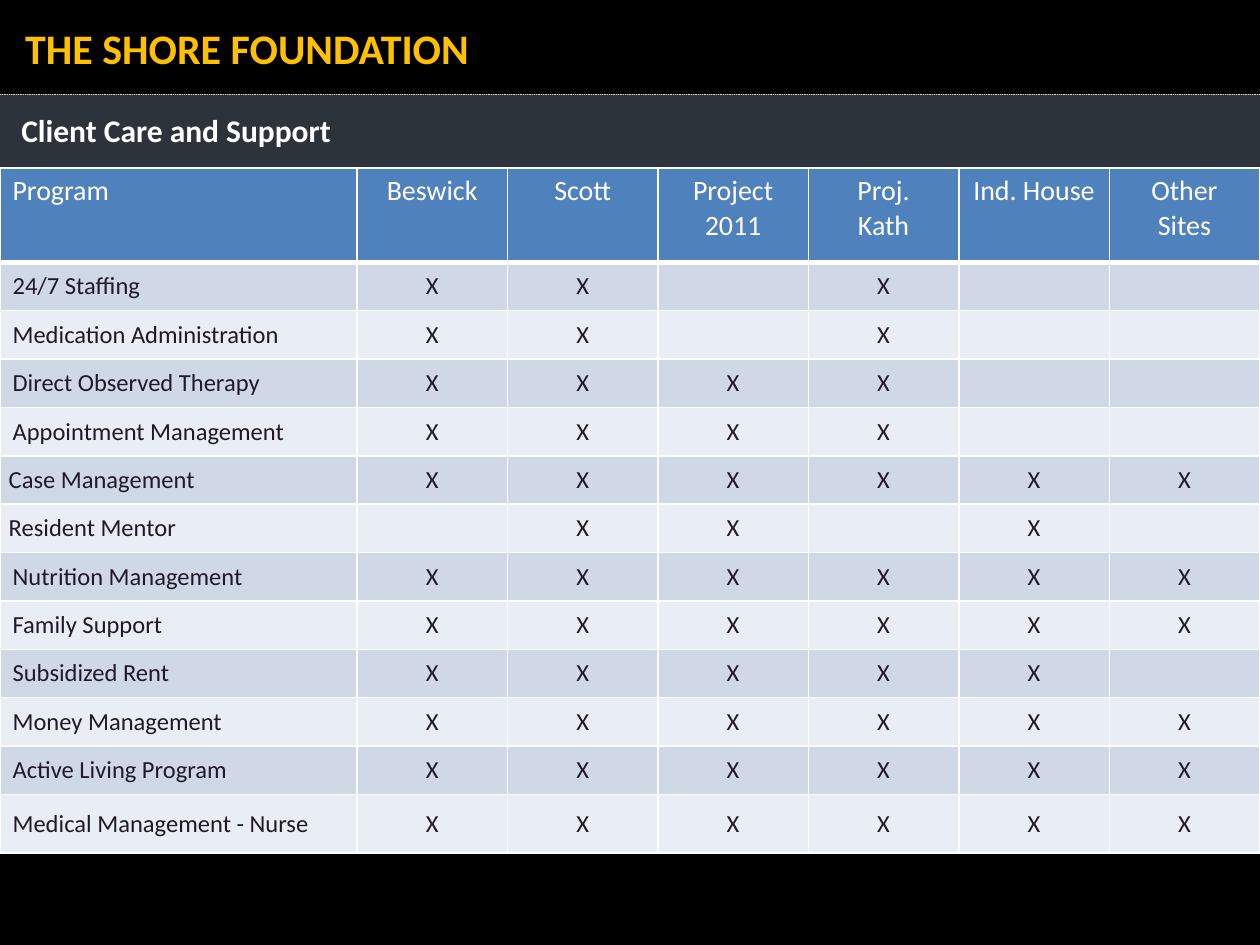
import pptx
import pptx.util
import pptx.dml.color
import pptx.enum.dml
import pptx.enum.shapes
import pptx.enum.text
import pptx.oxml
import pptx.oxml.ns
from lxml import etree

Pt = pptx.util.Pt
ANCHOR = pptx.enum.text.MSO_ANCHOR
ALIGN = pptx.enum.text.PP_ALIGN

# Content
TITLE = "THE SHORE FOUNDATION"
SUBTITLE = "Client Care and Support"
HEADERS = [["Program"], ["Beswick"], ["Scott"], ["Project 2011"],
           ["Proj.", "Kath"], ["Ind. House"], ["Other Sites"]]
# One mark per site column, "-" where the program is not offered
PROGRAMS = [
    ("24/7 Staffing", "XX-X--"),
    ("Medication Administration", "XX-X--"),
    ("Direct Observed Therapy", "XXXX--"),
    ("Appointment Management", "XXXX--"),
    ("Case Management", "XXXXXX"),
    ("Resident Mentor", "-XX-X-"),
    ("Nutrition Management", "XXXXXX"),
    ("Family Support", "XXXXXX"),
    ("Subsidized Rent", "XXXXX-"),
    ("Money Management", "XXXXXX"),
    ("Active Living Program", "XXXXXX"),
    ("Medical Management - Nurse", "XXXXXX"),
]
TIGHT_LABELS = {"Case Management", "Resident Mentor"}

THEME = {
    "font": "Calibri", "title_size": 24, "subtitle_size": 18,
    "header_size": 16, "body_size": 14,
    "black": "000000", "slate": "2C333B", "rule": "D9D9D9",
    "gold": "FFC000", "white": "FFFFFF", "ink": "201929",
    "header": "4F81BD", "bands": ("D0D8E8", "E9EDF4"),
}

# Layout, in points
W, H = 720, 540
BAR_H = 54
TABLE_TOP = 95.9
COL_W = [204] + [86] * 6
ROW_H = [54] + [27.65] * 11 + [33.6]


def rgb(name):
    return pptx.dml.color.RGBColor.from_string(THEME.get(name, name))


def add_run(p, text, size, color, bold=False):
    r = p.add_run()
    r.text = text
    r.font.name = THEME["font"]
    r.font.size = Pt(THEME[size])
    r.font.bold = bold
    r.font.color.rgb = rgb(color)


def add_band(slide, top, height, color):
    sp = slide.shapes.add_shape(pptx.enum.shapes.MSO_SHAPE.RECTANGLE,
                                0, Pt(top), Pt(W), Pt(height))
    sp.shadow.inherit = False
    sp.fill.solid()
    sp.fill.fore_color.rgb = rgb(color)
    sp.line.fill.background()


def add_rule(slide, y):
    line = slide.shapes.add_connector(pptx.enum.shapes.MSO_CONNECTOR.STRAIGHT,
                                      0, Pt(y), Pt(W), Pt(y))
    line.line.color.rgb = rgb("rule")
    line.line.width = Pt(0.5)
    line.line.dash_style = pptx.enum.dml.MSO_LINE.ROUND_DOT
    etree.SubElement(line._element.spPr, pptx.oxml.ns.qn("a:effectLst"))


def add_heading(slide, text, box, inset_y, anchor, size, color):
    sp = slide.shapes.add_textbox(*[Pt(v) for v in box])
    tf = sp.text_frame
    tf.word_wrap = True
    tf.vertical_anchor = anchor
    tf.margin_left = tf.margin_right = Pt(14.4)
    tf.margin_top = tf.margin_bottom = Pt(inset_y)
    add_run(tf.paragraphs[0], text, size, color, bold=True)


def set_borders(cell, bottom):
    tcPr = cell._tc.get_or_add_tcPr()
    for i, (side, width) in enumerate(zip("LRTB", (1, 1, 1, bottom))):
        tcPr.insert(i, pptx.oxml.parse_xml(
            f'<a:ln{side} {pptx.oxml.ns.nsdecls("a")} w="{Pt(width)}">'
            f'<a:solidFill><a:srgbClr val="{THEME["white"]}"/></a:solidFill>'
            f'</a:ln{side}>'))


def fill_cell(cell, lines, column, size, color, fill, anchor, bottom=1):
    cell.fill.solid()
    cell.fill.fore_color.rgb = rgb(fill)
    cell.vertical_anchor = anchor
    tight = bool(TIGHT_LABELS.intersection(lines))
    cell.margin_left = cell.margin_right = Pt(5 if tight else 7.2)
    cell.margin_top = cell.margin_bottom = Pt(0 if tight else 3.6)
    set_borders(cell, bottom)
    tf = cell.text_frame
    for i, text in enumerate(lines):
        p = tf.add_paragraph() if i else tf.paragraphs[0]
        p.alignment = ALIGN.CENTER if column else ALIGN.LEFT
        add_run(p, text, size, color)
    if not lines:  # keeps an empty cell from stretching its row
        etree.SubElement(tf.paragraphs[0]._p, pptx.oxml.ns.qn("a:endParaRPr"),
                         sz=str(THEME[size] * 100))


def add_program_table(slide):
    table = slide.shapes.add_table(len(ROW_H), len(COL_W), 0, Pt(TABLE_TOP),
                                   Pt(W), Pt(sum(ROW_H))).table
    for col, width in zip(table.columns, COL_W):
        col.width = Pt(width)
    for row, height in zip(table.rows, ROW_H):
        row.height = Pt(height)
    for c, lines in enumerate(HEADERS):
        fill_cell(table.cell(0, c), lines, c, "header_size", "white",
                  "header", ANCHOR.TOP, bottom=3)
    for r, (program, marks) in enumerate(PROGRAMS):
        cells = [[program]] + [[m] if m == "X" else [] for m in marks]
        for c, lines in enumerate(cells):
            fill_cell(table.cell(r + 1, c), lines, c, "body_size", "ink",
                      THEME["bands"][r % 2], ANCHOR.MIDDLE)


def main():
    prs = pptx.Presentation()
    prs.slide_width, prs.slide_height = Pt(W), Pt(H)
    slide = prs.slides.add_slide(prs.slide_layouts[6])

    # Background bands and dotted rules
    add_band(slide, H - BAR_H, BAR_H, "black")
    add_band(slide, BAR_H, H - 2 * BAR_H, "slate")
    add_band(slide, 0, BAR_H, "black")
    for y in (BAR_H, H - BAR_H):
        add_rule(slide, y)

    # Title, table and subtitle
    add_heading(slide, TITLE, (0, 0, W, BAR_H), 7.2, ANCHOR.MIDDLE,
                "title_size", "gold")
    add_program_table(slide)
    add_heading(slide, SUBTITLE, (-2.2, 60, W + 2.2, 29), 3.6, ANCHOR.TOP,
                "subtitle_size", "white")
    prs.save("out.pptx")


if __name__ == "__main__":
    main()
